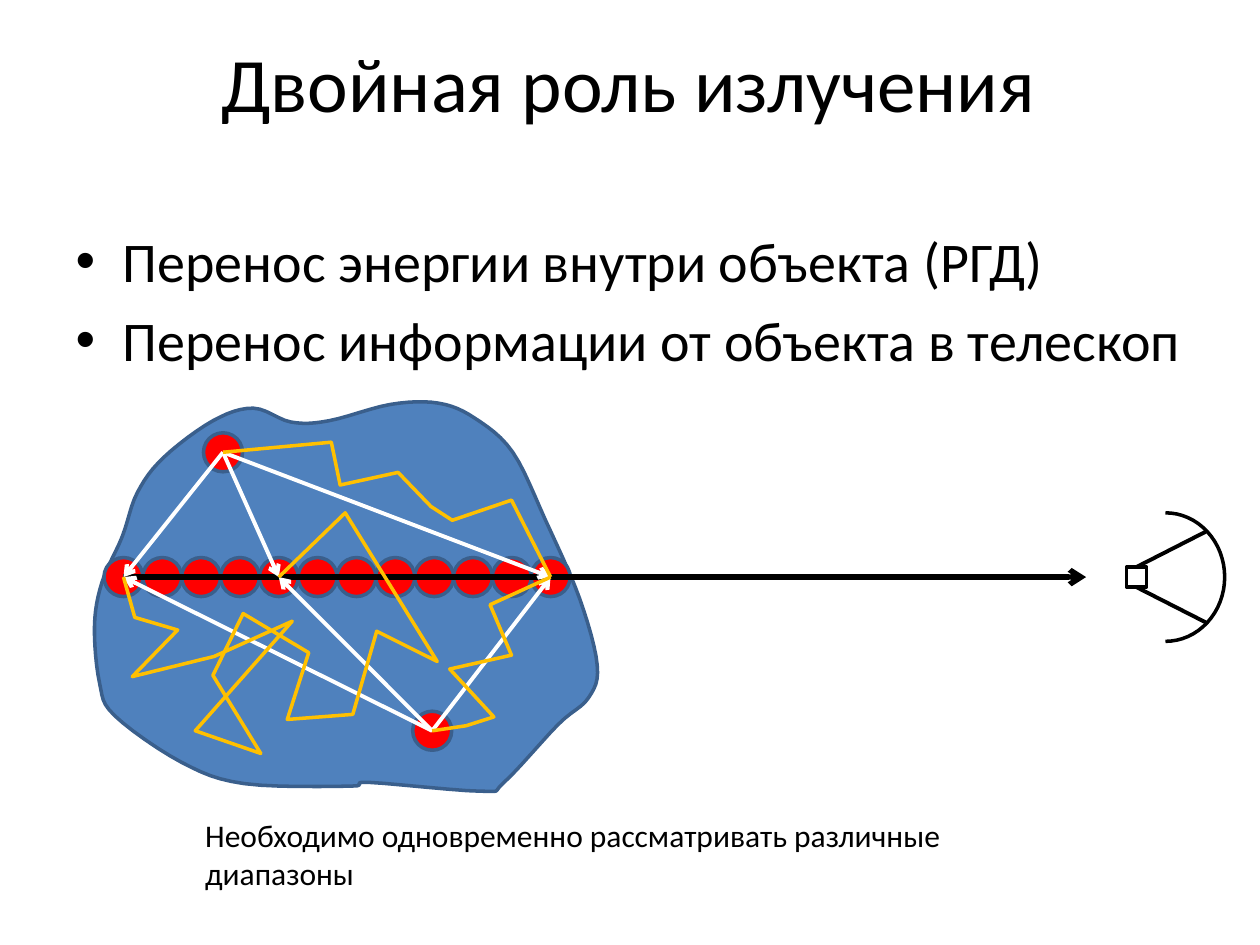
from math import cos, pi, sin

from lxml import etree
from pptx import Presentation
from pptx.dml.color import RGBColor
from pptx.enum.shapes import MSO_CONNECTOR, MSO_SHAPE
from pptx.enum.text import MSO_AUTO_SIZE
from pptx.oxml.ns import qn
from pptx.util import Inches, Pt

STRAIGHT = MSO_CONNECTOR.STRAIGHT
OVAL = MSO_SHAPE.OVAL
RECTANGLE = MSO_SHAPE.RECTANGLE
FIT_SHAPE = MSO_AUTO_SIZE.SHAPE_TO_FIT_TEXT

BLACK = RGBColor(0x00, 0x00, 0x00)
WHITE = RGBColor(0xFF, 0xFF, 0xFF)
BLUE = RGBColor(0x4F, 0x81, 0xBD)
DARK_BLUE = RGBColor(0x3A, 0x5F, 0x8C)
RED = RGBColor(0xFF, 0x00, 0x00)
ORANGE = RGBColor(0xFF, 0xC0, 0x00)


def add_ray(shapes, start, end, color, width, arrow=True):
    ray = shapes.add_connector(STRAIGHT, *[Inches(v) for v in (*start, *end)])
    ray.line.color.rgb = color
    ray.line.width = Pt(width)
    if arrow:
        etree.SubElement(ray.line._get_or_add_ln(), qn("a:tailEnd"), type="arrow")
    etree.SubElement(ray._element.spPr, qn("a:effectLst"))


def add_path(shapes, points, color, fill=None):
    corners = [(Inches(x), Inches(y)) for x, y in points]
    builder = shapes.build_freeform(*corners[0], scale=1.0)
    builder.add_line_segments(corners[1:], close=fill is not None)
    outline = builder.convert_to_shape()
    outline.shadow.inherit = False
    outline.line.color.rgb = color
    outline.line.width = Pt(2)
    if fill is None:
        outline.fill.background()
    else:
        outline.fill.solid()
        outline.fill.fore_color.rgb = fill


prs = Presentation()
prs.slide_width, prs.slide_height = Inches(10), Inches(7.5)
slide = prs.slides.add_slide(prs.slide_layouts[1])
shapes = slide.shapes

title = shapes.title
title.left, title.top, title.width, title.height = [Inches(v) for v in (0.74, 0.21, 8.5, 0.87)]
title.text_frame.text = "Двойная роль излучения"

roles = slide.placeholders[1]
roles.left, roles.top, roles.width, roles.height = [Inches(v) for v in (0.5, 1.75, 9, 1.69)]
roles.text_frame.text = "Перенос энергии внутри объекта (РГД)\nПеренос информации от объекта в телескоп"

caption = shapes.add_textbox(Inches(1.53), Inches(6.43), Inches(7.09), Inches(0.91))
caption.text_frame.word_wrap = True
caption.text_frame.auto_size = FIT_SHAPE
caption.text_frame.text = "Необходимо одновременно рассматривать различные диапазоны"

for block, size in ((title, 44), (roles, 32), (caption, 18)):
    for paragraph in block.text_frame.paragraphs:
        paragraph.font.name = "Calibri"
        paragraph.font.size = Pt(size)
        paragraph.font.color.rgb = BLACK

cloud_left = [(1.3, 3.63), (1.09, 3.91), (0.97, 4.26), (0.81, 4.62), (0.75, 4.97), (0.79, 5.42)]
cloud_bottom = [(0.91, 5.68), (1.44, 6.05), (1.94, 6.22), (2.78, 6.24), (2.93, 6.21), (3.82, 6.28)]
cloud_right = [(4, 6.21), (4.43, 5.75), (4.67, 5.54), (4.74, 5.28), (4.6, 4.75), (4.33, 4.13)]
cloud_top = [(4.07, 3.59), (3.77, 3.32), (3.48, 3.2), (3.1, 3.21), (2.61, 3.34), (2.31, 3.35),
             (2.01, 3.24), (1.69, 3.34)]
anchors = cloud_left + cloud_bottom + cloud_right + cloud_top

STEPS = 6
cloud = []
for i, current in enumerate(anchors):
    before, after, beyond = [anchors[(i + shift) % len(anchors)] for shift in (-1, 1, 2)]
    for step in range(STEPS):
        t = step / STEPS
        cloud.append([
            b + t * (c - a) / 2 + t**2 * (2 * a - 5 * b + 4 * c - d) / 2
            + t**3 * (3 * b - a - 3 * c + d) / 2
            for a, b, c, d in zip(before, current, after, beyond)
        ])
add_path(shapes, cloud, DARK_BLUE, BLUE)

DIAMETER = 0.31
AXIS_Y = 4.58
ROW_START, ROW_END, ROW_COUNT = 0.98, 4.37, 12
pitch = (ROW_END - ROW_START) / (ROW_COUNT - 1)
row = [(ROW_START + i * pitch, AXIS_Y) for i in range(ROW_COUNT)]
first, inner, last = row[0], row[4], row[-1]
upper, lower = (1.77, 3.59), (3.43, 5.8)

for x, y in row + [upper, lower]:
    emitter = shapes.add_shape(OVAL, Inches(x - DIAMETER / 2), Inches(y - DIAMETER / 2),
                               Inches(DIAMETER), Inches(DIAMETER))
    emitter.shadow.inherit = False
    emitter.fill.solid()
    emitter.fill.fore_color.rgb = RED
    emitter.line.color.rgb = DARK_BLUE
    emitter.line.width = Pt(2)

add_ray(shapes, first, (8.62, AXIS_Y), BLACK, 3)

DISH_X, DISH_WIDTH, DISH_HALF_HEIGHT = 9.25, 0.47, 0.51
ARC_STEPS = 32
RECEIVER_X, RECEIVER_SIZE = 9.02, 0.16
telescope = shapes.add_group_shape().shapes
angles = [pi * (step / ARC_STEPS - 0.5) for step in range(ARC_STEPS + 1)]
dish = [(DISH_X + DISH_WIDTH * cos(a), AXIS_Y + DISH_HALF_HEIGHT * sin(a)) for a in angles]
add_path(telescope, dish, BLACK)
receiver = telescope.add_shape(
    RECTANGLE, Inches(RECEIVER_X - RECEIVER_SIZE / 2), Inches(AXIS_Y - RECEIVER_SIZE / 2),
    Inches(RECEIVER_SIZE), Inches(RECEIVER_SIZE))
receiver.shadow.inherit = False
receiver.fill.background()
receiver.line.color.rgb = BLACK
receiver.line.width = Pt(2)
for side in (-1, 1):
    strut_start = (RECEIVER_X, AXIS_Y + side * RECEIVER_SIZE / 2)
    add_ray(telescope, strut_start, (9.57, AXIS_Y + side * 0.36), BLACK, 2.25, arrow=False)

for source in (upper, lower):
    for target in (first, inner, last):
        add_ray(shapes, source, target, WHITE, 2.25)

upper_to_last = [(2.63, 3.51), (2.7, 3.85), (3.16, 3.75), (3.42, 4.02), (3.59, 4.13), (4.06, 3.97)]
lower_to_last = [(3.7, 5.76), (3.92, 5.69), (3.57, 5.31), (4.06, 5.2), (3.89, 4.8)]
first_to_inner = [
    (1.07, 4.9), (1.41, 5), (1.05, 5.37), (1.7, 5.21), (2.32, 4.93), (1.55, 5.8),
    (2.07, 5.98), (1.69, 5.36), (1.93, 4.87), (2.45, 5.18), (2.28, 5.71), (2.8, 5.67),
    (2.99, 5.01), (3.47, 5.25), (2.74, 4.07),
]
scatterings = [
    (upper, upper_to_last, last), (lower, lower_to_last, last), (first, first_to_inner, inner),
]
for source, turns, target in scatterings:
    add_path(shapes, [source, *turns, target], ORANGE)

prs.save("out.pptx")
